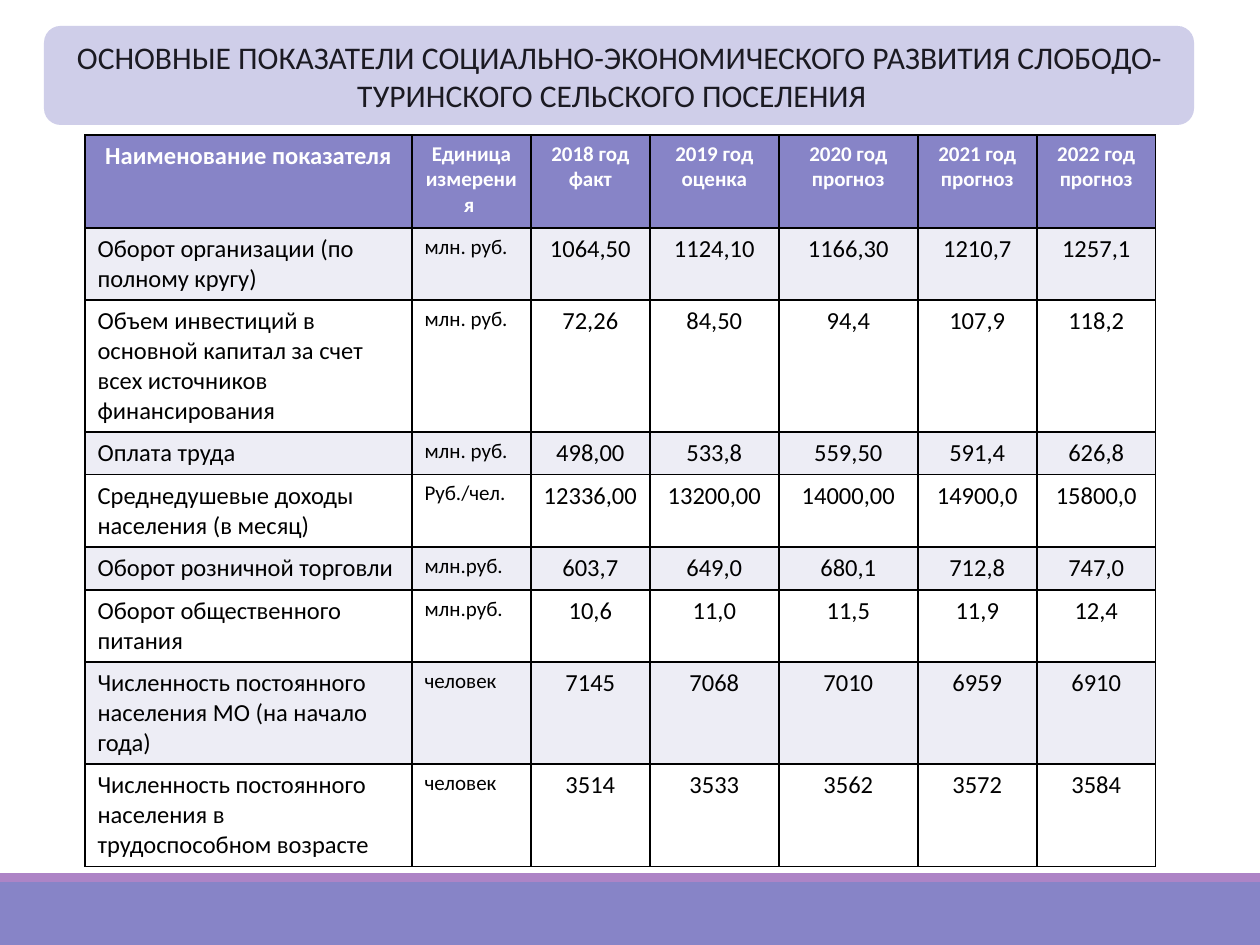
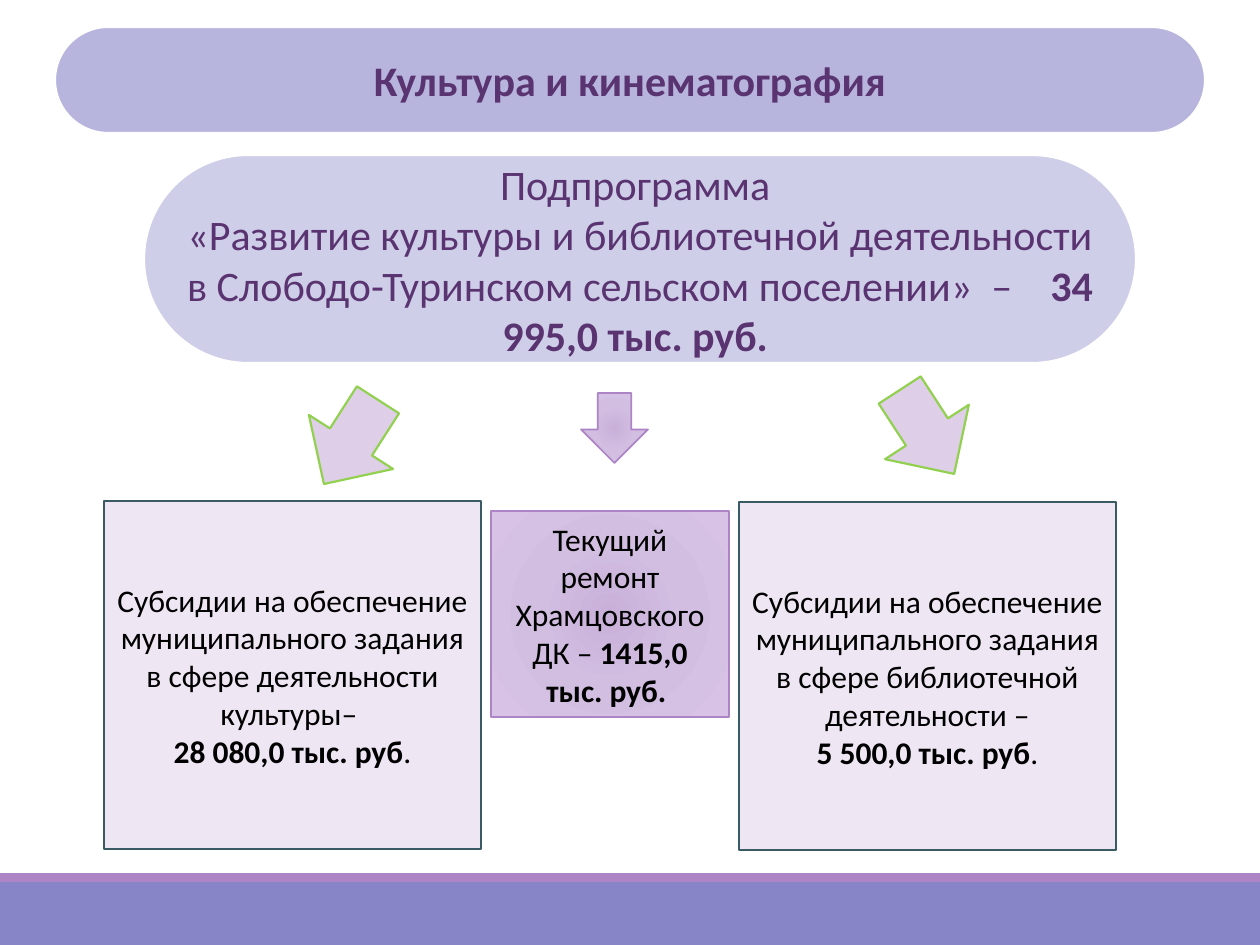
from pptx import Presentation
from pptx import util as u
from pptx.dml.color import RGBColor
from pptx.enum import shapes, text
from pptx.oxml import parse_xml
from pptx.oxml.ns import nsdecls

PX = 914400 / 126
FONT = "Calibri"
FORM = shapes.MSO_SHAPE
MID = text.PP_ALIGN.CENTER
LEFT = text.PP_ALIGN.LEFT

HUES = {
    "band": "8784C7", "strip": "AD84C6", "pale": "CFCEE9", "pill": "B7B5DD",
    "ink": "1B1A22", "plum": "5A3471", "black": "000000", "white": "FFFFFF",
    "stripe": "EDEDF5", "box": "EFE6F4", "slate": "3A5B63",
    "arrow": "DECEE8", "green": "92D050",
}
GLOW = [(0, "C8B0D9"), (45, "D2BEE1"), (100, "D8C3E7")]

COLS = [327, 119, 119, 129, 139, 119, 119]
ROWS = [93, 72, 132, 42, 72, 43, 72, 102, 102]
HEAD = ["Наименование показателя", "Единица измерения ", "2018 год факт",
        "2019 год оценка", "2020 год прогноз", "2021 год прогноз",
        "2022 год\nпрогноз"]
DATA = [
    ["Оборот организации (по полному кругу)", "млн. руб.",
     "1064,50", "1124,10", "1166,30", "1210,7", "1257,1"],
    ["Объем инвестиций в основной капитал за счет всех источников финансирования",
     "млн. руб.", "72,26", "84,50", "94,4", "107,9", "118,2"],
    ["Оплата труда", "млн. руб.", "498,00", "533,8", "559,50", "591,4", "626,8"],
    ["Среднедушевые доходы населения (в месяц)", "Руб./чел.",
     "12336,00", "13200,00", "14000,00", "14900,0", "15800,0"],
    ["Оборот розничной торговли", "млн.руб.",
     "603,7", "649,0", "680,1", "712,8", "747,0"],
    ["Оборот общественного питания", "млн.руб.",
     "10,6", "11,0", "11,5", "11,9", "12,4"],
    ["Численность постоянного населения МО (на начало года)", "человек",
     "7145", "7068", "7010", "6959", "6910"],
    ["Численность постоянного населения в трудоспособном возрасте", "человек",
     "3514", "3533", "3562", "3572", "3584"],
]


def hue(name):
    return RGBColor.from_string(HUES[name])


def emu(*vals):
    return [u.Emu(round(v * PX)) for v in vals]


def write(frame, paras, size, tint, align=MID, bold=False):
    """Each paragraph is a list of runs; a run marked with * flips bold."""
    for i, runs in enumerate(paras):
        para = frame.paragraphs[0] if i == 0 else frame.add_paragraph()
        para.alignment = align
        for words in runs:
            run = para.add_run()
            run.text = words.lstrip("*")
            look = {"name": FONT, "size": u.Pt(size),
                    "bold": bold or words.startswith("*")}
            for key, val in look.items():
                setattr(run.font, key, val)
            run.font.color.rgb = hue(tint)


def glow(shape):
    """Fill from the centre outwards."""
    stops = "".join(f'<a:gs pos="{pos * 1000}"><a:srgbClr val="{tint}"/></a:gs>'
                    for pos, tint in GLOW)
    edges = " ".join(f'{side}="100000"' for side in "ltrb")
    fill = parse_xml(f'<a:gradFill {nsdecls("a")}><a:gsLst>{stops}</a:gsLst>'
                     f'<a:path path="circle"><a:fillToRect {edges}/></a:path>'
                     '</a:gradFill>')
    shape._element.spPr.insert(2, fill)


def block(slide, form, area, fill=None, line=None, width=1.25, turn=0, round_=None):
    shape = slide.shapes.add_shape(form, *emu(*area))
    shape.shadow.inherit = False
    shape.rotation = turn
    if round_ is not None:
        shape.adjustments[0] = round_
    if fill:
        shape.fill.solid()
        shape.fill.fore_color.rgb = hue(fill)
    else:
        glow(shape)
    if line:
        shape.line.color.rgb = hue(line)
        shape.line.width = u.Pt(width)
    else:
        shape.line.fill.background()
    return shape


def title(slide, area, words, size, tint, bold=False):
    """Lay the title over its panel."""
    shape = slide.shapes.title
    for key, val in zip(("left", "top", "width", "height"), emu(*area)):
        setattr(shape, key, val)
    frame = shape.text_frame
    look = {"word_wrap": True, "auto_size": text.MSO_AUTO_SIZE.NONE,
            "vertical_anchor": text.MSO_ANCHOR.MIDDLE}
    for key, val in look.items():
        setattr(frame, key, val)
    write(frame, [[words]], size, tint, bold=bold)
    slide.shapes._spTree.append(shape._element)


def cell(box, words, size, tint, fill, align, bold):
    props = box._tc.get_or_add_tcPr()
    for side in "LRTB":
        props.append(parse_xml(
            f'<a:ln{side} {nsdecls("a")} w="12700"><a:solidFill>'
            f'<a:srgbClr val="{HUES["black"]}"/></a:solidFill></a:ln{side}>'))
    box.fill.solid()
    box.fill.fore_color.rgb = hue(fill)
    paras = [[part] for part in words.split("\n")]
    write(box.text_frame, paras, size, tint, align, bold)


def grid(slide, left, top):
    area = emu(left, top, sum(COLS), sum(ROWS))
    table = slide.shapes.add_table(len(ROWS), len(COLS), *area).table
    for col, wide in zip(table.columns, emu(*COLS)):
        col.width = wide
    for row, high in zip(table.rows, emu(*ROWS)):
        row.height = high
    for r, line in enumerate([HEAD] + DATA):
        for c, words in enumerate(line):
            box = table.cell(r, c)
            if r == 0:
                cell(box, words, 12 if c else 14, "white", "band", MID, True)
            else:
                cell(box, words, 12 if c == 1 else 14, "black",
                     "stripe" if r % 2 else "white", MID if c > 1 else LEFT, False)


def bands(prs, slide):
    """Move the footer bands to the master, behind everything."""
    tree = prs.slide_master.shapes._spTree
    for area, fill in (((0, 873, 1260, 9), "strip"), ((0, 882, 1260, 63), "band")):
        tree.insert(2, block(slide, FORM.RECTANGLE, area, fill)._element)


def figures(slide):
    area = (44, 26, 1150, 99)
    block(slide, FORM.ROUNDED_RECTANGLE, area, "pale")
    title(slide, area, "ОСНОВНЫЕ ПОКАЗАТЕЛИ СОЦИАЛЬНО-ЭКОНОМИЧЕСКОГО РАЗВИТИЯ "
          "СЛОБОДО-ТУРИНСКОГО СЕЛЬСКОГО ПОСЕЛЕНИЯ  ", 18, "ink")
    grid(slide, 85, 135)


def culture(slide):
    # Title and programme
    area = (55, 27, 1150, 106)
    block(slide, FORM.ROUNDED_RECTANGLE, area, "pill", "white", round_=0.5)
    title(slide, area, "Культура и кинематография", 24, "plum", True)
    plan = block(slide, FORM.ROUNDED_RECTANGLE, (144, 155, 992, 208),
                 "pale", "white", round_=0.5)
    write(plan.text_frame, [
        ["Подпрограмма "],
        ["«Развитие культуры и библиотечной деятельности в Слободо-Туринском "
         "сельском поселении»  –    ", "*34 995,0 тыс. руб. "]], 24, "plum")

    # Arrows to the three costs
    for left, top, turn in ((301, 392, 32.7), (877, 382, 327)):
        block(slide, FORM.DOWN_ARROW, (left, top, 100, 100), "arrow", "green", turn=turn)
    block(slide, FORM.DOWN_ARROW, (581, 393, 67, 70), line="strip", width=1)

    # Costs
    grant = "Субсидии на обеспечение муниципального задания в сфере "
    costs = [
        ((104, 501, 377, 348), "box", "slate", 1.25,
         [[grant + "деятельности культуры– "], ["*28 080,0 тыс. руб", "."]]),
        ((739, 502, 377, 348), "box", "slate", 1.25,
         [[grant + "библиотечной деятельности –"], ["*5 500,0 тыс. руб", "."]]),
        ((491, 511, 238, 206), None, "strip", 1,
         [["Текущий ремонт Храмцовского ДК – ", "*1415,0 тыс. руб. "]]),
    ]
    for area, fill, line, width, paras in costs:
        box = block(slide, FORM.RECTANGLE, area, fill, line, width)
        write(box.text_frame, paras, 18, "black")


def main():
    prs = Presentation()
    prs.slide_width, prs.slide_height = emu(1260, 945)
    for i, draw in enumerate((figures, culture)):
        slide = prs.slides.add_slide(prs.slide_layouts[5])
        if i == 0:
            bands(prs, slide)
        draw(slide)
    prs.save("out.pptx")


if __name__ == "__main__":
    main()
